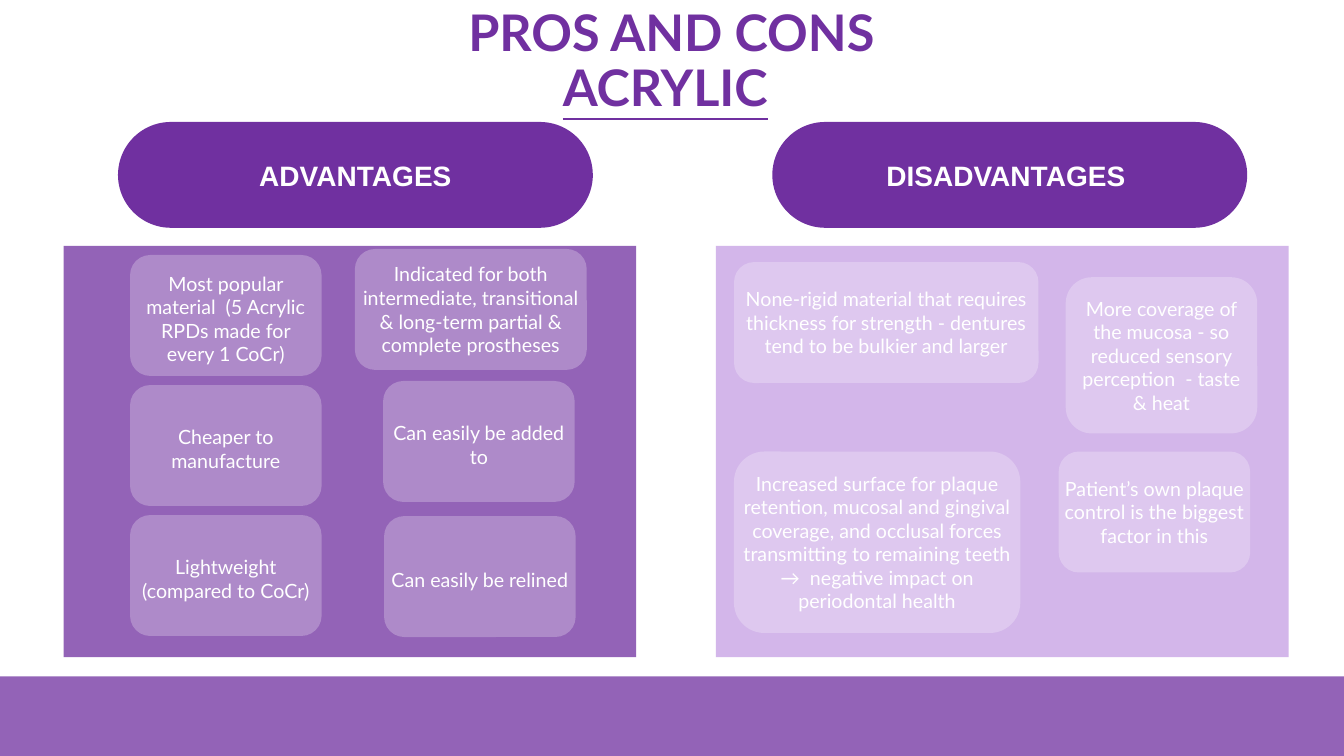
from lxml.etree import SubElement
from pptx import Presentation
from pptx.dml.color import RGBColor
from pptx.enum.shapes import MSO_SHAPE
from pptx.enum.text import MSO_ANCHOR, PP_ALIGN
from pptx.oxml.ns import qn
from pptx.util import Inches, Pt

PURPLE, LILAC, WHITE = "7030A0", "D3B6EA", "FFFFFF"


def tint(hue):
    return RGBColor.from_string(hue)


class Board:
    """Hold the style and the current slide, and draw its elements."""

    def __init__(self, deck):
        self.slide = deck.slides.add_slide(deck.slide_layouts[6])
        self.font = "Lato"

    def shape(self, kind, at, hue, alpha=100):
        item = self.slide.shapes.add_shape(kind, *map(Inches, at))
        item.shadow.inherit = False
        item.line.fill.background()
        item.fill.solid()
        item.fill.fore_color.rgb = tint(hue)
        if alpha < 100:
            color = item.fill._xPr.find(qn("a:solidFill"))[0]
            SubElement(color, qn("a:alpha")).set("val", str(alpha * 1000))
        return item

    def panel(self, at, hue, alpha=100):
        self.shape(MSO_SHAPE.RECTANGLE, at, hue, alpha)

    def style(self, item, size, hue, bold=False, font=None):
        frame = item.text_frame
        frame.word_wrap = True
        frame.vertical_anchor = MSO_ANCHOR.MIDDLE
        para = frame.paragraphs[0]
        para.alignment = PP_ALIGN.CENTER
        para.font.name = font or self.font
        para.font.size = Pt(size)
        para.font.bold = bold
        para.font.color.rgb = tint(hue)
        return para

    def title(self, at, top, under):
        para = self.style(self.slide.shapes.add_textbox(*map(Inches, at)), 36, PURPLE, True)
        para.line_spacing = 0.9
        para.add_run().text = top
        para.add_line_break()
        run = para.add_run()
        run.text = under
        run.font.underline = True
        para.add_run().text = " "

    def pill(self, left, text):
        item = self.shape(MSO_SHAPE.ROUNDED_RECTANGLE, (left, 1.21, 4.71, 1.05), PURPLE)
        item.adjustments[0] = 0.5
        self.style(item, 20, WHITE, True, "Arial").add_run().text = text

    def card(self, left, top, text, wide=1.9, high=1.2, drop=0):
        item = self.shape(MSO_SHAPE.ROUNDED_RECTANGLE, (left, top, wide, high), WHITE, 25)
        item.adjustments[0] = 0.167
        frame = item.text_frame
        frame.margin_left = frame.margin_right = 0
        frame.margin_top = Inches(0.05 + drop)
        self.style(item, 14, WHITE).add_run().text = text


def main():
    deck = Presentation()
    deck.slide_width, deck.slide_height = Inches(13.33), Inches(7.5)
    board = Board(deck)
    board.panel((0, 6.71, 13.33, 0.79), PURPLE, 75)
    board.title((2.03, 0.21, 9.26, 0.82), "PROS AND CONS", "ACRYLIC")
    board.panel((7.1, 2.44, 5.68, 4.08), LILAC)
    board.panel((0.63, 2.44, 5.68, 4.08), PURPLE, 75)
    board.pill(1.17, "ADVANTAGES")
    board.pill(7.66, "DISADVANTAGES ")

    pros = [
        "Most popular material  (5 Acrylic RPDs made for every 1 CoCr)",
        "Cheaper to manufacture",
        "Lightweight (compared to CoCr)",
    ]
    for row, text in enumerate(pros):
        board.card(1.29, 2.53 + 1.29 * row, text, drop=0.06)
    board.card(3.52, 2.47, "Indicated for both intermediate, transitional "
               "& long-term partial & complete prostheses", wide=2.3)
    board.card(3.8, 3.78, "Can easily be added to", drop=0.06)
    board.card(3.81, 5.12, "Can easily be relined", drop=0.06)

    board.card(7.28, 2.6, "None-rigid material that requires thickness for "
               "strength - dentures tend to be bulkier and larger", wide=3.02)
    board.card(10.57, 2.75, "More coverage of the mucosa - so reduced sensory "
               "perception  - taste & heat", high=1.55)
    board.card(7.28, 4.48, "Increased surface for plaque retention, mucosal and "
               "gingival coverage, and occlusal forces transmitting to remaining "
               "teeth →  negative impact on periodontal health", wide=2.84, high=1.8)
    board.card(10.5, 4.48, "Patient’s own plaque control is the biggest factor in this")
    deck.save("out.pptx")


if __name__ == "__main__":
    main()
